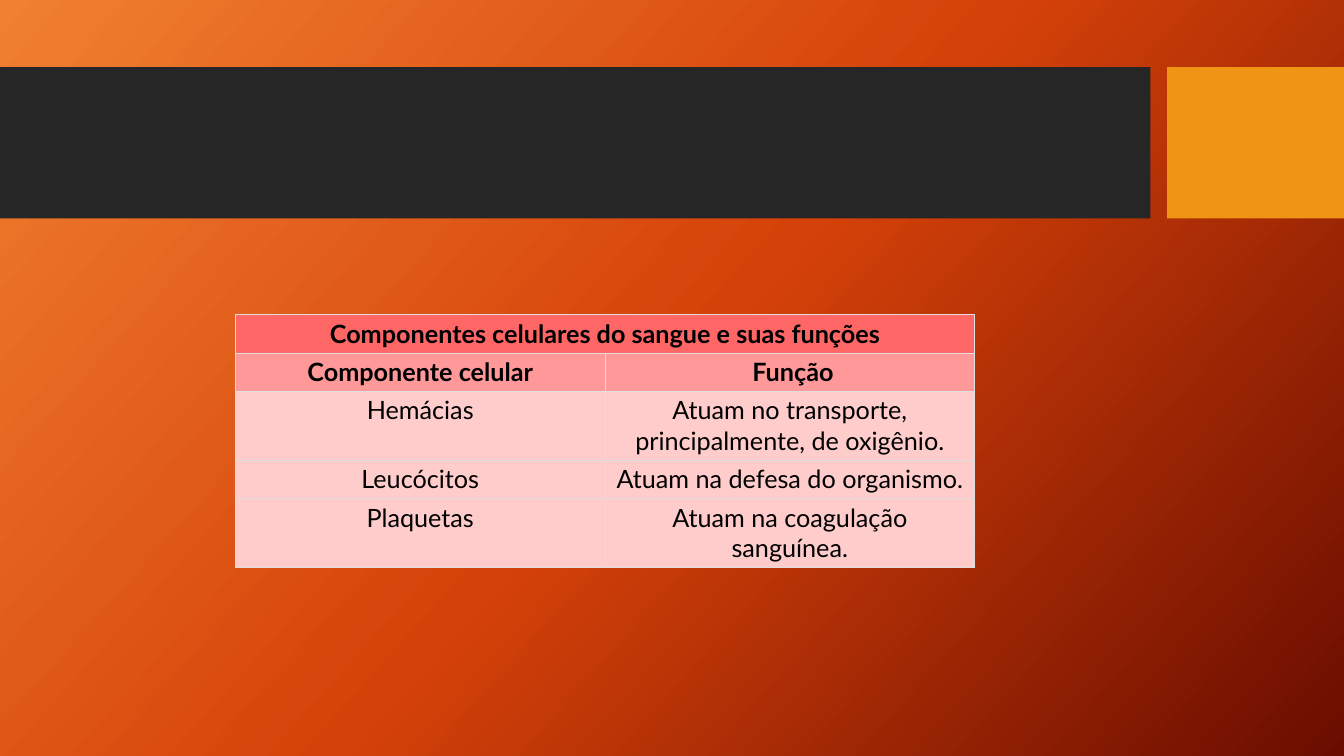
from copy import deepcopy

from lxml import etree
from pptx import Presentation
from pptx.dml.color import RGBColor
from pptx.enum.shapes import MSO_SHAPE
from pptx.enum.text import PP_ALIGN
from pptx.oxml.ns import qn
from pptx.util import Pt

RECTANGLE = MSO_SHAPE.RECTANGLE
CENTER = PP_ALIGN.CENTER

ORANGE = RGBColor(0xF1, 0x80, 0x31)
RED_ORANGE = RGBColor(0xD5, 0x42, 0x09)
MAROON = RGBColor(0x6A, 0x0D, 0x00)
CHARCOAL = RGBColor(0x26, 0x26, 0x26)
AMBER = RGBColor(0xF0, 0x94, 0x15)
CORAL = RGBColor(0xFF, 0x66, 0x66)
SALMON = RGBColor(0xFF, 0x99, 0x99)
PINK = RGBColor(0xFF, 0xCC, 0xCC)
BLACK = RGBColor(0, 0, 0)
BORDER_GRAY = RGBColor(0xDF, 0xDF, 0xDF)


def write_text(frame, text, size=18, bold=False, color=BLACK, align=CENTER):
    paragraph = frame.paragraphs[0]
    paragraph.alignment = align
    run = paragraph.add_run()
    run.text = text
    run.font.name = "Lato"
    run.font.size = Pt(size)
    run.font.bold = bold
    run.font.color.rgb = color


def add_borders(cell):
    properties = cell._tc.get_or_add_tcPr()
    for side in ("a:lnL", "a:lnR", "a:lnT", "a:lnB"):
        line = etree.SubElement(properties, qn(side), w=str(Pt(0.75)))
        solid = etree.SubElement(line, qn("a:solidFill"))
        etree.SubElement(solid, qn("a:srgbClr"), val=str(BORDER_GRAY))


prs = Presentation()
prs.slide_width = Pt(960)
prs.slide_height = Pt(540)
slide = prs.slides.add_slide(prs.slide_layouts[6])

# Background gradient
background = slide.background.fill
background.gradient()
background.gradient_angle = 360 - 42
stop_list = slide.element.find(".//" + qn("a:gsLst"))
stop_list.append(deepcopy(stop_list[-1]))
for stop, position, color in zip(
    background.gradient_stops, (0, 0.5, 1), (ORANGE, RED_ORANGE, MAROON)
):
    stop.position = position
    stop.color.rgb = color

# Header band
for left, width, color in ((0, 821.8, CHARCOAL), (833.6, 126.4, AMBER)):
    band = slide.shapes.add_shape(RECTANGLE, Pt(left), Pt(48), Pt(width), Pt(108))
    band.shadow.inherit = False
    band.fill.solid()
    band.fill.fore_color.rgb = color
    band.line.fill.background()

# Blood cell table: row height, fill, bold, texts
ROWS = (
    (27.4, CORAL, True, ("Componentes celulares do sangue e suas funções",)),
    (27.4, SALMON, True, ("Componente celular", " Função")),
    (49.2, PINK, False,
     ("Hemácias", "Atuam no transporte, principalmente, de oxigênio.")),
    (27.4, PINK, False, ("Leucócitos", "Atuam na defesa do organismo.")),
    (49.2, PINK, False, ("Plaquetas", "Atuam na coagulação sanguínea.")),
)
table_height = sum(row[0] for row in ROWS)
table = slide.shapes.add_table(
    len(ROWS), 2, Pt(168.2), Pt(224.8), Pt(528), Pt(table_height)
).table
table.cell(0, 0).merge(table.cell(0, 1))

for row_index, (height, color, bold, texts) in enumerate(ROWS):
    table.rows[row_index].height = Pt(height)
    for cell in table.rows[row_index].cells:
        add_borders(cell)
        cell.fill.solid()
        cell.fill.fore_color.rgb = color
        cell.margin_left = cell.margin_right = Pt(5.2)
        cell.margin_top = cell.margin_bottom = Pt(2.6)
    for column, text in enumerate(texts):
        write_text(table.cell(row_index, column).text_frame, text, bold=bold)

prs.save("out.pptx")
